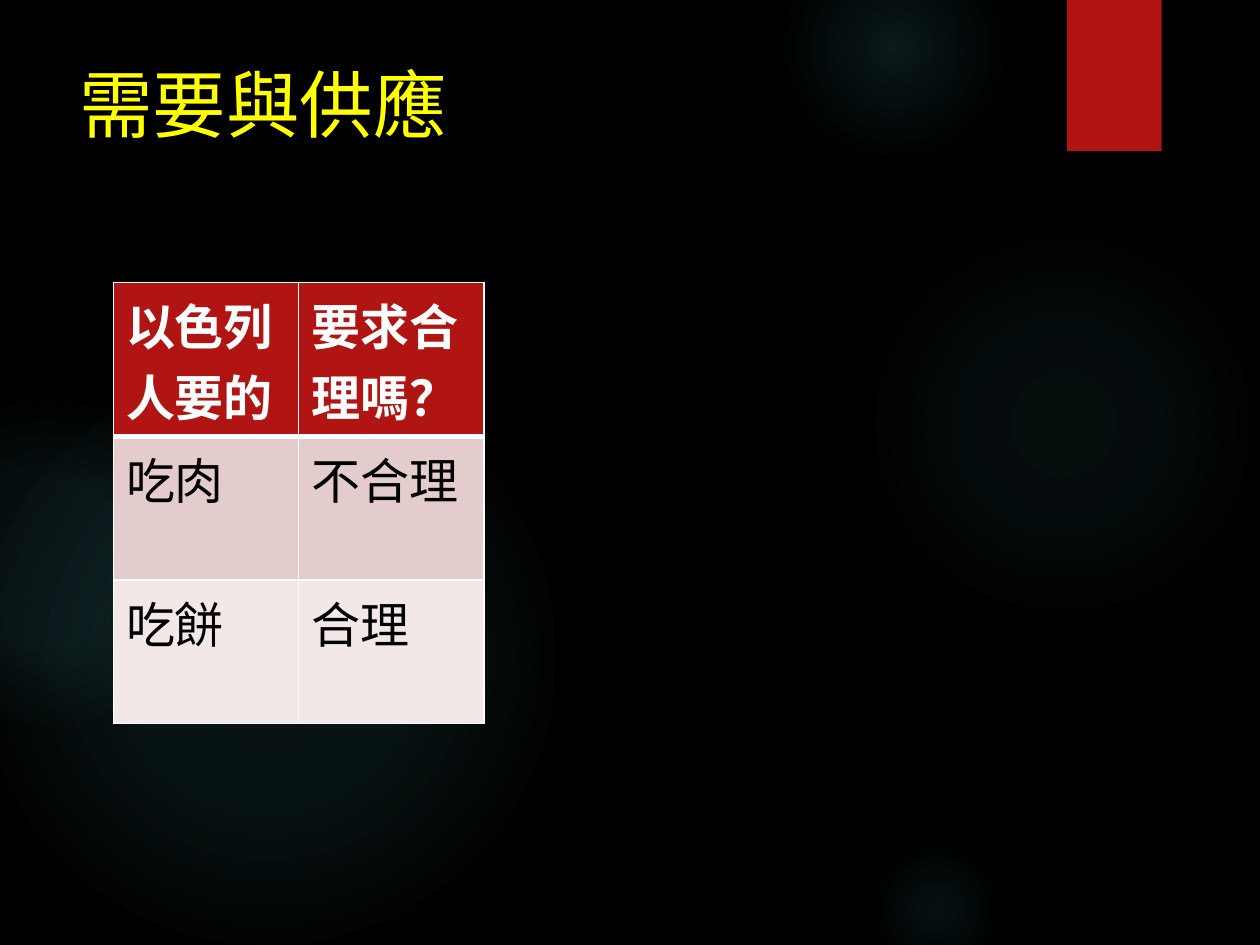
from lxml import etree
from pptx import Presentation
from pptx.dml.color import RGBColor
from pptx.enum.shapes import MSO_SHAPE
from pptx.enum.text import MSO_ANCHOR
from pptx.oxml import parse_xml
from pptx.oxml.ns import nsdecls, qn
from pptx.util import Inches, Pt

OVAL, RECT, TOP = MSO_SHAPE.OVAL, MSO_SHAPE.RECTANGLE, MSO_ANCHOR.TOP
FONT = "League Spartan"
RED, GLOW, WHITE, BLACK, YELLOW = "B01513", "50B9C1", "FFFFFF", "000000", "FFFF00"

TITLE = "需要與供應"
ROWS = [("以色列人要的", "要求合理嗎？"), ("吃肉", "不合理"), ("吃餅", "合理")]
ROW_FILLS = [RED, "E4CCCC", "F2E8E7"]
COL_W, ROW_H = 1.47, 1.14
GLOWS = [
    (6.89, 1.83, 3.08, [(0, 7), (36, 6), (69, 0)]),
    (6.22, -0.5, 1.75, [(0, 14), (36, 7), (73, 0)]),
    (6.89, 6.67, 1.08, [(0, 9), (36, 5), (66, 0)]),
    (-0.17, 2.92, 4.58, [(0, 11), (36, 10), (75, 0)]),
    (-0.92, 3.17, 2.58, [(0, 8), (36, 8), (72, 0)]),
]


def rgb(color):
    return RGBColor.from_string(color)


def write(tf, text, size=28, color=BLACK, bold=False, spacing=1.0):
    tf.word_wrap = True
    p = tf.paragraphs[0]
    p.line_spacing = spacing
    r = p.add_run()
    r.text = text
    r.font.name, r.font.size, r.font.bold = FONT, Pt(size), bold
    r.font.color.rgb = rgb(color)


def add_plain(s, kind, *box):
    sp = s.shapes.add_shape(kind, *map(Inches, box))
    sp.shadow.inherit = False
    sp.line.fill.background()
    return sp


def add_glow(s, left, top, size, stops):
    sp = add_plain(s, OVAL, left, top, size, size)
    sp.fill.background()
    spPr = sp._element.spPr
    gs = "".join(
        f'<a:gs pos="{pos * 1000}"><a:srgbClr val="{GLOW}">'
        f'<a:alpha val="{alpha * 1000}"/></a:srgbClr></a:gs>'
        for pos, alpha in stops)
    grad = parse_xml(
        f'<a:gradFill {nsdecls("a")}><a:gsLst>{gs}</a:gsLst><a:path path="circle">'
        '<a:fillToRect l="50000" t="50000" r="50000" b="50000"/></a:path></a:gradFill>')
    spPr.replace(spPr.find(qn("a:noFill")), grad)


def add_ribbon(s):
    sp = add_plain(s, RECT, 8.47, 0, 0.75, 1.2)
    sp.fill.solid()
    sp.fill.fore_color.rgb = rgb(RED)
    effects = sp._element.spPr.find(qn("a:effectLst"))
    effects.append(parse_xml(
        f'<a:outerShdw {nsdecls("a")} blurRad="{Pt(3)}" dist="{Pt(2)}" dir="5400000">'
        f'<a:srgbClr val="{BLACK}"><a:alpha val="45000"/></a:srgbClr></a:outerShdw>'))


def set_borders(cell, **widths):
    tcPr = cell._tc.get_or_add_tcPr()
    for side in "LRTB":
        ln = etree.SubElement(tcPr, qn(f"a:ln{side}"), w=str(Pt(widths.get(side, 1))))
        fill = etree.SubElement(ln, qn("a:solidFill"))
        etree.SubElement(fill, qn("a:srgbClr"), val=WHITE)


def add_demands(s):
    box = (0.9, 2.24, COL_W * len(ROWS[0]), ROW_H * len(ROWS))
    table = s.shapes.add_table(len(ROWS), len(ROWS[0]), *map(Inches, box)).table
    for col in table.columns:
        col.width = Inches(COL_W)
    for i, (texts, fill) in enumerate(zip(ROWS, ROW_FILLS)):
        table.rows[i].height = Inches(ROW_H)
        head = i == 0
        for j, text in enumerate(texts):
            cell = table.cell(i, j)
            set_borders(cell, B=3 if head else 1, T=3 if i == 1 else 1)
            cell.fill.solid()
            cell.fill.fore_color.rgb = rgb(fill)
            write(cell.text_frame, text, color=WHITE if head else BLACK, bold=head)


def main():
    """Build the slide on needs and supply and save it."""
    prs = Presentation()
    prs.slide_width, prs.slide_height = Inches(10), Inches(7.5)
    s = prs.slides.add_slide(prs.slide_layouts[5])
    s.background.fill.solid()
    s.background.fill.fore_color.rgb = rgb(BLACK)
    for glow in GLOWS:
        add_glow(s, *glow)
    add_ribbon(s)
    title = s.shapes.title
    title.left, title.top, title.width, title.height = map(Inches, (0.53, 0.5, 7.72, 1.53))
    title.text_frame.vertical_anchor = TOP
    write(title.text_frame, TITLE, size=42, color=YELLOW, spacing=0.9)
    title.text_frame.paragraphs[0].alignment = 1
    add_demands(s)
    prs.save("out.pptx")


main()
